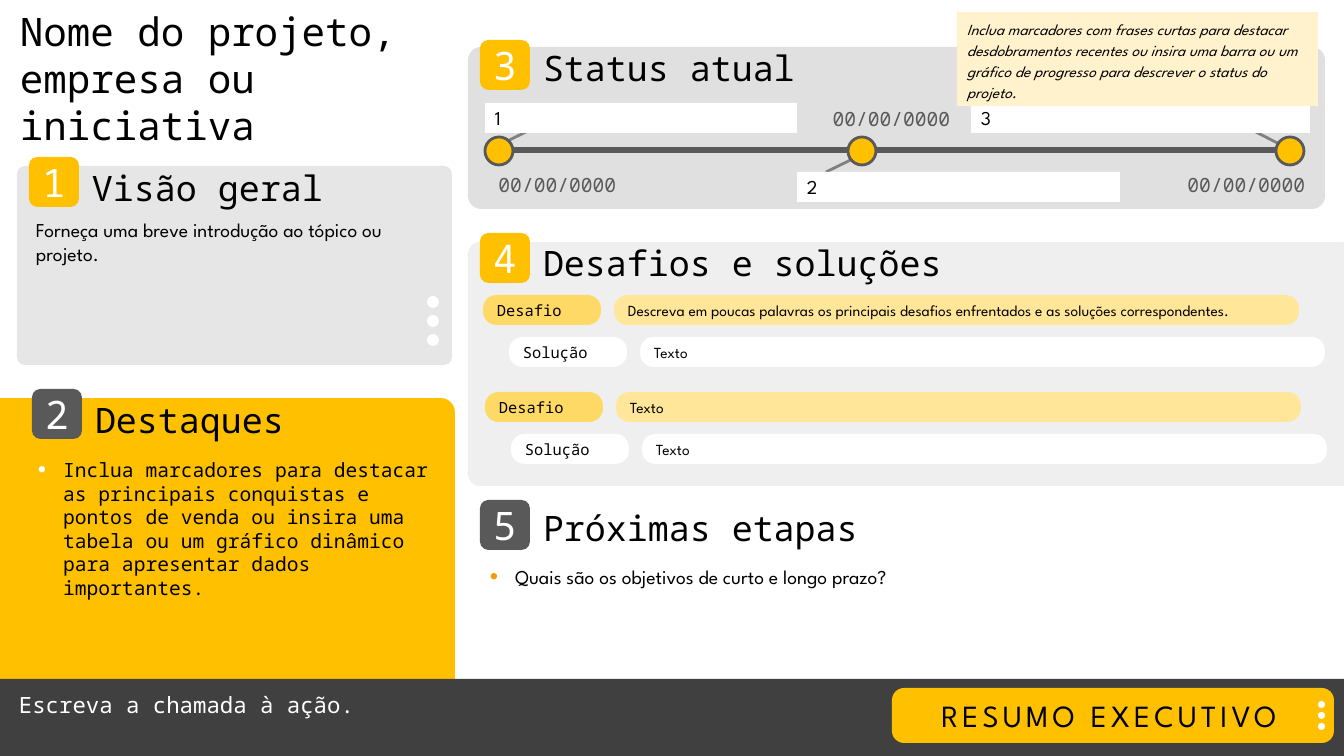
"""Build a one-page executive summary slide."""
import pptx
import pptx.util
import pptx.dml.color
import pptx.enum.shapes
import pptx.enum.text
import pptx.oxml.ns
from lxml import etree

EMU_PER_PX = 914400 / 100.8
MONO = "Noto Sans Mono"
SANS = "League Spartan"
SHAPE = pptx.enum.shapes.MSO_SHAPE
ANCHOR = pptx.enum.text.MSO_ANCHOR
ALIGN = pptx.enum.text.PP_ALIGN
COLORS = {
    "black": "000000", "white": "FFFFFF", "yellow": "FFC000", "amber": "F59C00",
    "challenge": "FFD966", "challenge_text": "FFE699", "note": "FFF2CC",
    "overview": "E7E6E6", "status": "E0E0E0", "solutions": "EFEFEF",
    "leader": "808080", "dark": "595959", "footer": "404040",
}


def px(n):
    """Convert pixels to EMU."""
    return pptx.util.Emu(round(n * EMU_PER_PX))


def rgb(name):
    """Look up a named colour."""
    return pptx.dml.color.RGBColor.from_string(COLORS[name])


def add_xml(parent, tag, **attrs):
    """Append a DrawingML element."""
    return etree.SubElement(parent, pptx.oxml.ns.qn(tag), attrs)


def write(s, text, size, font=MONO, color="black", align=ALIGN.LEFT,
          anchor=ANCHOR.TOP, insets=(10, 5, 10, 5), spacing=0, italic=False):
    """Write one styled paragraph into a shape and return it."""
    tf = s.text_frame
    tf.word_wrap = True
    tf.vertical_anchor = anchor
    tf.margin_left, tf.margin_top, tf.margin_right, tf.margin_bottom = map(px, insets)
    p = tf.paragraphs[0]
    p.alignment = align
    r = p.add_run()
    r.text = text
    r.font.size = pptx.util.Pt(size)
    r.font.name = font
    r.font.color.rgb = rgb(color)
    r.font.italic = italic
    if spacing:
        r._r.get_or_add_rPr().set("spc", str(spacing * 100))
    return p


def add_text(sp, x, y, w, h, text, size, **style):
    """Add a text box and return its paragraph."""
    return write(sp.add_textbox(px(x), px(y), px(w), px(h)), text, size, **style)


def add_box(sp, kind, x, y, w, h, fill, *adjustments, outline=None):
    """Add a flat filled preset shape."""
    s = sp.add_shape(kind, px(x), px(y), px(w), px(h))
    s.shadow.inherit = False
    s.fill.solid()
    s.fill.fore_color.rgb = rgb(fill)
    if outline:
        s.line.color.rgb = rgb(outline)
        s.line.width = pptx.util.Pt(2)
    else:
        s.line.fill.background()
    for i, value in enumerate(adjustments):
        s.adjustments[i] = value
    return s


def add_line(sp, x1, y1, x2, y2, color, width):
    """Add a straight line without a shadow."""
    s = sp.add_connector(pptx.enum.shapes.MSO_CONNECTOR.STRAIGHT,
                         px(x1), px(y1), px(x2), px(y2))
    s.line.color.rgb = rgb(color)
    s.line.width = pptx.util.Pt(width)
    add_xml(s._element.spPr, "a:effectLst")


def add_dots(sp, x, y, size, step):
    """Add a column of three white dots."""
    for i in range(3):
        add_box(sp, SHAPE.OVAL, x, y + i * step, size, size, "white")


def add_heading(sp, x, y, drop, number, title, fill):
    """Add a numbered badge and its section title."""
    badge = add_box(sp, SHAPE.ROUNDED_RECTANGLE, x, y, 50, 50, fill)
    write(badge, number, 28, color="white", align=ALIGN.CENTER,
          anchor=ANCHOR.MIDDLE, insets=(0, 0, 0, 0), spacing=-3)
    add_text(sp, x + 63, y + drop, 500 if x > 400 else 320, 36, title, 25,
             anchor=ANCHOR.MIDDLE, insets=(0, 0, 0, 0))


def add_bullet(p, color):
    """Give a paragraph a coloured hanging bullet."""
    p.space_after = pptx.util.Pt(6)
    pPr = p._p.get_or_add_pPr()
    pPr.set("marL", "228600")
    pPr.set("indent", "-228600")
    add_xml(add_xml(pPr, "a:buClr"), "a:srgbClr", val=COLORS[color])
    add_xml(pPr, "a:buSzPct", val="120000")
    add_xml(pPr, "a:buFont", typeface="Arial")
    add_xml(pPr, "a:buChar", char="•")


def add_milestone(sp, dot_x, date_x, date_y, label, x, y, w):
    """Add a timeline dot with its date and label."""
    add_box(sp, SHAPE.OVAL, dot_x, 137, 28, 28, "yellow", outline="dark")
    add_text(sp, date_x, date_y, 155, 34, "00/00/0000", 14, color="dark",
             align=ALIGN.CENTER)
    s = add_box(sp, SHAPE.RECTANGLE, x, y, w, 30, "white")
    write(s, label, 14, font=SANS, anchor=ANCHOR.MIDDLE, insets=(10, 0, 10, 0))


def add_pill_row(sp, x, y, label, text, label_fill, text_fill):
    """Add a label pill followed by a wide text pill."""
    for left, w, words, font, fill in ((x, 118, label, MONO, label_fill),
                                       (x + 131, 685, text, SANS, text_fill)):
        s = add_box(sp, SHAPE.ROUNDED_RECTANGLE, left, y, w, 30, fill, 0.45)
        write(s, words, 11, font=font, anchor=ANCHOR.MIDDLE, insets=(10, 0, 0, 0))


def add_panels(sp):
    """Add the section backgrounds and the footer."""
    panel = add_box(sp, SHAPE.ROUND_2_SAME_RECTANGLE, 784, -74, 244, 876,
                    "solutions", 0.05, 0)
    panel.rotation = 270
    add_box(sp, SHAPE.ROUNDED_RECTANGLE, 468, 47, 857, 162, "status", 0.08)
    add_box(sp, SHAPE.ROUND_1_RECTANGLE, 0, 398, 455, 358, "yellow", 0.04)
    add_box(sp, SHAPE.ROUNDED_RECTANGLE, 17, 166, 435, 199, "overview", 0.04)
    add_box(sp, SHAPE.RECTANGLE, 0, 679, 1344, 77, "footer")
    add_box(sp, SHAPE.ROUNDED_RECTANGLE, 892, 688, 442, 55, "yellow", 0.22)
    add_text(sp, 892, 692, 434, 47, "RESUMO EXECUTIVO", 22, font=SANS,
             align=ALIGN.CENTER, spacing=3)
    add_dots(sp, 1318, 701, 7, 11)
    add_dots(sp, 427, 296, 12, 19)


def add_timeline(sp):
    """Add the status timeline."""
    for ends in ((1291, 150, 1252, 130), (826, 172, 865, 153), (491, 149, 530, 130)):
        add_line(sp, *ends, "leader", 2)
    add_line(sp, 498, 150, 1300, 150, "dark", 4)
    for milestone in ((485, 480, 168, "1", 485, 103, 312),
                      (848, 814, 102, "2", 797, 172, 323),
                      (1276, 1169, 168, "3", 971, 103, 339)):
        add_milestone(sp, *milestone)


def main():
    """Build and save the slide."""
    prs = pptx.Presentation()
    prs.slide_width, prs.slide_height = px(1344), px(756)
    sp = prs.slides.add_slide(prs.slide_layouts[6]).shapes
    add_panels(sp)
    add_timeline(sp)
    for heading in ((29, 157, 12, "1", "Visão geral", "yellow"),
                    (32, 389, 12, "2", "Destaques", "dark"),
                    (480, 40, 9, "3", "Status atual", "yellow"),
                    (480, 233, 11, "4", "Desafios e soluções", "yellow"),
                    (480, 500, 9, "5", "Próximas etapas", "dark")):
        add_heading(sp, *heading)
    add_text(sp, 20, 7, 407, 127, "Nome do projeto, empresa ou iniciativa", 28,
             insets=(0, 0, 0, 0))
    add_text(sp, 26, 213, 392, 57,
             "Forneça uma breve introdução ao tópico ou projeto.", 14, font=SANS)
    add_text(sp, 9, 686, 843, 37, "Escreva a chamada à ação.", 16, color="white")
    p = add_text(sp, 28, 453, 414, 152,
                 "Inclua marcadores para destacar as principais conquistas e pontos "
                 "de venda ou insira uma tabela ou um gráfico dinâmico para "
                 "apresentar dados importantes.", 14)
    add_bullet(p, "white")
    p = add_text(sp, 480, 560, 852, 34,
                 "Quais são os objetivos de curto e longo prazo?", 14, font=SANS)
    add_bullet(p, "amber")
    challenges = ("Descreva em poucas palavras os principais desafios enfrentados "
                  "e as soluções correspondentes.", "Texto")
    for i, challenge in enumerate(challenges):
        x, y = 483 + 2 * i, 295 + 97 * i
        add_pill_row(sp, x, y, "Desafio", challenge, "challenge", "challenge_text")
        add_pill_row(sp, x + 26, y + 42, "Solução", "Texto", "white", "white")
    note = add_box(sp, SHAPE.RECTANGLE, 957, 12, 361, 94, "note")
    p = write(note, "Inclua marcadores com frases curtas para destacar desdobramentos "
              "recentes ou insira uma barra ou um gráfico de progresso para descrever "
              "o status do projeto.", 11, font=SANS, italic=True)
    p.line_spacing = 1.15
    prs.save("out.pptx")


if __name__ == "__main__":
    main()
